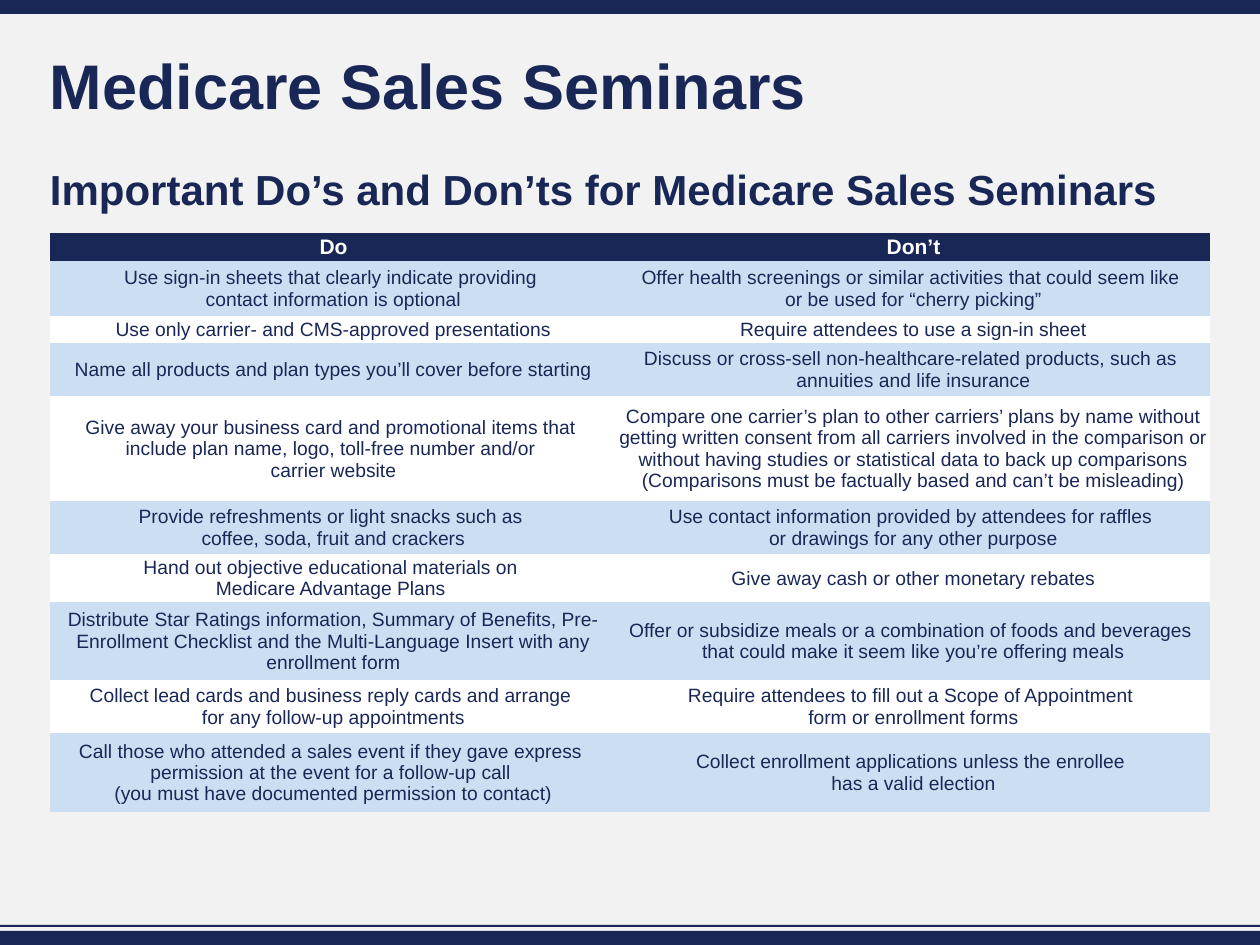
from pptx import Presentation
from pptx.dml.color import RGBColor
from pptx.enum.shapes import MSO_SHAPE
from pptx.enum.text import MSO_ANCHOR as ANCHOR, PP_ALIGN as ALIGN
from pptx.util import Emu, Pt

NAVY = RGBColor(0x19, 0x27, 0x57)
HEADER_NAVY = RGBColor(0x19, 0x27, 0x56)
PALE_BLUE = RGBColor(0xCC, 0xDF, 0xF2)
WHITE = RGBColor(0xFF, 0xFF, 0xFF)
GRAY = RGBColor(0xF2, 0xF2, 0xF2)
FONT = "Arial"
WIDTH, HEIGHT, MARGIN = 1260, 945, 50
TEXT_WIDTH = WIDTH - 2 * MARGIN

# Content: (text, top, height, size, colour, line spacing)
HEADINGS = [
    ("Medicare Sales Seminars", 50, 78, 36, NAVY, 0.9),
    ("Important Do’s and Don’ts for Medicare Sales Seminars",
     164, 50, 24, HEADER_NAVY, 1.0),
]
BARS = [(0, 14), (931, 14), (925, 2)]  # top, height
COLUMNS = [567, 593]
# Row height, do, don't; \n starts a paragraph, \v breaks a line
ROWS = [
    (28, "Do", "Don’t"),
    (55, "Use sign-in sheets that clearly indicate providing \n"
         "contact information is\u00a0optional",
     "Offer health screenings or similar activities that could seem like \n"
     "or be used for “cherry picking”"),
    (27, "Use only carrier- and CMS-approved presentations",
     "Require attendees to use a sign-in sheet"),
    (53, "Name all products and plan types you’ll cover before starting",
     "Discuss or cross-sell non-healthcare-related products, such as \n"
     "annuities and life insurance"),
    (105, "Give away your business card and promotional items that \v"
          "include plan name, logo, toll-free number and/or \v"
          "carrier website",
     "Compare one carrier’s plan to other carriers’ plans by name without "
     "getting written consent from all carriers involved in the comparison or "
     "without having studies or statistical data to back up comparisons "
     "(Comparisons must be factually based and can’t be misleading)"),
    (53, "Provide refreshments or light snacks such as \n"
         "coffee, soda, fruit and crackers",
     "Use contact information provided by attendees for raffles \n"
     "or drawings for any other purpose"),
    (48, "Hand out objective educational materials on \v"
         "Medicare Advantage Plans ",
     "Give away cash or other monetary rebates"),
    (78, "Distribute Star Ratings information, Summary of Benefits, "
         "Pre-Enrollment Checklist and the Multi-Language Insert with any "
         "enrollment form",
     "Offer or subsidize meals or a combination of foods and beverages \n"
     "that could make it seem like you’re offering meals"),
    (53, "Collect lead cards and business reply cards and arrange \n"
         "for any follow-up appointments",
     "Require attendees to fill out a Scope of Appointment \n"
     "form or enrollment forms"),
    (79, "Call those who attended a sales event if they gave express \n"
         "permission at the event for a follow-up call \n"
         "(you must have documented permission to contact)",
     "Collect enrollment applications unless the enrollee \n"
     "has a valid election"),
]


def px(n):
    return Emu(round(n * 914400 / 126))


def add_run(p, text, size, color, bold):
    r = p.add_run()
    r.text = text
    r.font.name, r.font.size, r.font.bold = FONT, Pt(size), bold
    r.font.color.rgb = color


def fill_cell(cell, text, fill, size, color, bold):
    cell.fill.solid()
    cell.fill.fore_color.rgb = fill
    cell.vertical_anchor = ANCHOR.MIDDLE
    cell.margin_left = cell.margin_right = cell.margin_top = px(1)
    cell.margin_bottom = 0
    tf = cell.text_frame
    for i, para in enumerate(text.split("\n")):
        p = tf.add_paragraph() if i else tf.paragraphs[0]
        p.alignment = ALIGN.CENTER
        for j, line in enumerate(para.split("\v")):
            if j:
                p.add_line_break()
            add_run(p, line, size, color, bold)


prs = Presentation()
prs.slide_width, prs.slide_height = px(WIDTH), px(HEIGHT)
s = prs.slides.add_slide(prs.slide_layouts[6])
s.background.fill.solid()
s.background.fill.fore_color.rgb = GRAY

# Top and bottom bars
for top, height in BARS:
    sp = s.shapes.add_shape(MSO_SHAPE.RECTANGLE, 0, px(top), px(WIDTH), px(height))
    sp.shadow.inherit = False
    sp.fill.solid()
    sp.fill.fore_color.rgb = NAVY
    sp.line.fill.background()

# Title and subtitle
for text, top, height, size, color, spacing in HEADINGS:
    sp = s.shapes.add_textbox(px(MARGIN), px(top), px(TEXT_WIDTH), px(height))
    tf = sp.text_frame
    tf.word_wrap = True
    tf.vertical_anchor = ANCHOR.MIDDLE
    tf.margin_left = tf.margin_right = tf.margin_top = tf.margin_bottom = 0
    p = tf.paragraphs[0]
    p.line_spacing = spacing
    add_run(p, text, size, color, True)

# Do and don't table
table = s.shapes.add_table(
    len(ROWS), len(COLUMNS), px(MARGIN), px(233), px(TEXT_WIDTH),
    px(sum(row[0] for row in ROWS))).table
for column, width in zip(table.columns, COLUMNS):
    column.width = px(width)
for i, (height, *texts) in enumerate(ROWS):
    table.rows[i].height = px(height)
    if i == 0:
        style = (HEADER_NAVY, 12, WHITE, True)
    else:
        style = (PALE_BLUE if i % 2 else WHITE, 11, NAVY, False)
    for j, text in enumerate(texts):
        fill_cell(table.cell(i, j), text, *style)

# The cell fills replace the style's borders and banding
table.first_row = table.horz_banding = False
style_id = table._tbl.tblPr.find(
    "{http://schemas.openxmlformats.org/drawingml/2006/main}tableStyleId")
style_id.text = "{2D5ABB26-0587-4C30-8999-92F81FD0307C}"

prs.save("out.pptx")
